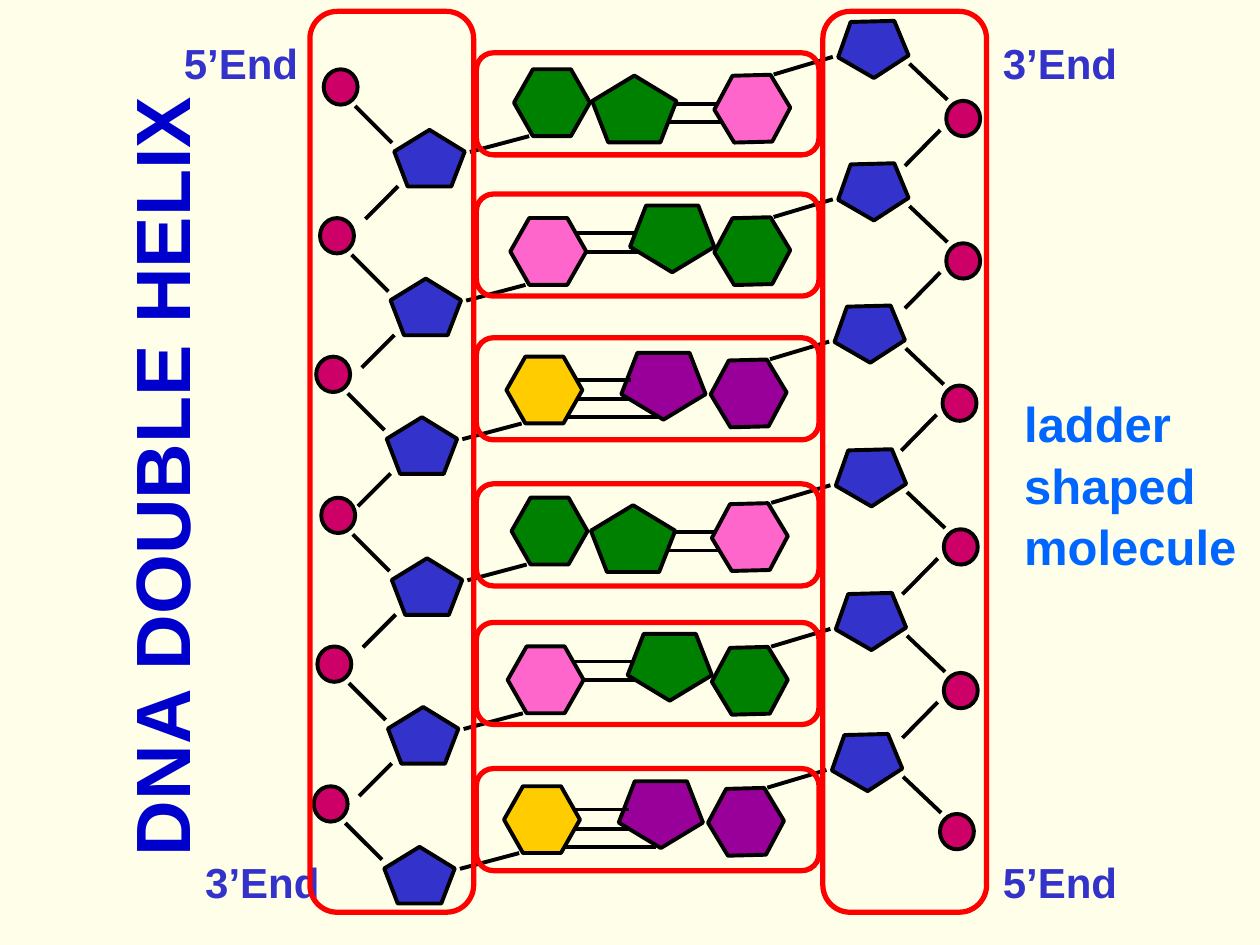
from dataclasses import dataclass
from typing import NamedTuple, Optional

from lxml.etree import SubElement
from pptx import Presentation
from pptx.dml.color import RGBColor
from pptx.enum.shapes import MSO_CONNECTOR, MSO_SHAPE
from pptx.enum.text import MSO_ANCHOR, MSO_AUTO_SIZE, PP_ALIGN
from pptx.oxml.ns import qn
from pptx.util import Pt

CREAM = RGBColor(0xFF, 0xFF, 0xE9)
BLACK = RGBColor(0x00, 0x00, 0x00)
RED = RGBColor(0xFF, 0x00, 0x00)
CRIMSON = RGBColor(0xCC, 0x00, 0x66)
INDIGO = RGBColor(0x33, 0x33, 0xCC)
GREEN = RGBColor(0x00, 0x80, 0x00)
PINK = RGBColor(0xFF, 0x66, 0xCC)
YELLOW = RGBColor(0xFF, 0xCC, 0x00)
PURPLE = RGBColor(0x99, 0x00, 0x99)
TITLE_BLUE = RGBColor(0x00, 0x00, 0xCC)
SKY_BLUE = RGBColor(0x00, 0x66, 0xFF)


class Point(NamedTuple):
    x: float
    y: float

    def shifted(self, offset: "Point") -> "Point":
        return Point(self.x + offset.x, self.y + offset.y)


class Link(NamedTuple):
    start: Point
    end: Point


class Bond(NamedTuple):
    left: float
    right: float
    y: float


@dataclass(frozen=True)
class Strand:
    sugar: Point
    base: Point
    sugar_link: Link
    base_link: Link
    next_link: Link
    rotation: float


@dataclass(frozen=True)
class Pairing:
    left_color: RGBColor
    ring_color: RGBColor
    right_color: RGBColor
    ring_rotation: float
    bonds: tuple[Bond, ...]
    front_bonds: tuple[Bond, ...] = ()


@dataclass(frozen=True)
class BasePair:
    left: Point
    right: Point
    ring: Point
    rung_top: float
    pairing: Pairing


PHOSPHATE_SIZE = Point(19.4, 20.2)
SUGAR_SIZE = Point(40.3, 32.4)
BASE_SIZE = Point(43.4, 38.2)
RING_SIZE = Point(48.2, 38.2)
RAIL_SIZE = Point(93.6, 514.8)
RUNG_SIZE = Point(195.8, 58.3)

LEFT_STRAND = Strand(
    sugar=Point(40.3, 34.6),
    base=Point(108.7, 0),
    sugar_link=Link(Point(18, 21), Point(39, 42)),
    base_link=Link(Point(83.5, 47.2), Point(117.4, 38.2)),
    next_link=Link(Point(42.5, 66.8), Point(23.8, 85.5)),
    rotation=0,
)
RIGHT_STRAND = Strand(
    sugar=Point(-61.9, -45.4),
    base=Point(-132.5, -14.6),
    sugar_link=Link(Point(0.7, -0.6), Point(-21, -21.2)),
    base_link=Link(Point(-64.8, -25.1), Point(-98.6, -15)),
    next_link=Link(Point(-3.4, 16.7), Point(-23.6, 37.2)),
    rotation=178.5,
)

GREEN_TO_PINK = Pairing(GREEN, GREEN, PINK, 0,
                        (Bond(92.5, 118.8, 19.8), Bond(87, 118.8, 30.2)))
PINK_TO_GREEN = Pairing(PINK, GREEN, GREEN, 180,
                        (Bond(36.7, 73.4, 8.6), Bond(41.8, 73.4, 19.4)))
YELLOW_TO_PURPLE = Pairing(YELLOW, PURPLE, PURPLE, 180,
                           (Bond(39.6, 71.3, 24.2), Bond(34.6, 87.1, 34.6)),
                           (Bond(39.6, 71.3, 13.3),))

BASE_PAIRS = (
    BasePair(Point(185, 39.6), Point(540.7, 57.6), Point(338.4, 43.2), 30.2, GREEN_TO_PINK),
    BasePair(Point(182.9, 124.6), Point(540.7, 139), Point(360, 117.4), 110.9, PINK_TO_GREEN),
    BasePair(Point(180.7, 203.8), Point(538.6, 220.3), Point(355, 201.6), 193, YELLOW_TO_PURPLE),
    BasePair(Point(183.6, 284.4), Point(539.3, 302.4), Point(337.7, 288.7), 276.5, GREEN_TO_PINK),
    BasePair(Point(181.4, 369.4), Point(539.3, 384.5), Point(358.6, 362.2), 355.7, PINK_TO_GREEN),
    BasePair(Point(179.3, 449.3), Point(537.1, 465.1), Point(353.5, 446.4), 439.2, YELLOW_TO_PURPLE),
)
END_LABELS = (
    ("3’End", Point(566, 18)),
    ("3’End", Point(110.2, 486)),
    ("5’End", Point(566, 486)),
    ("5’End", Point(98, 18)),
)


def add_outline(slide, kind: MSO_SHAPE, position: Point, size: Point,
                fill: Optional[RGBColor], rotation: float = 0,
                line: RGBColor = BLACK, width: float = 2.25,
                adjustment: Optional[float] = None) -> None:
    shape = slide.shapes.add_shape(kind, Pt(position.x), Pt(position.y), Pt(size.x), Pt(size.y))
    shape.shadow.inherit = False
    shape.rotation = rotation
    if fill is None:
        shape.fill.background()
    else:
        shape.fill.solid()
        shape.fill.fore_color.rgb = fill
    shape.line.color.rgb = line
    shape.line.width = Pt(width)
    if adjustment is not None:
        shape.adjustments[0] = adjustment


def add_link(slide, origin: Point, link: Link) -> None:
    start, end = origin.shifted(link.start), origin.shifted(link.end)
    connector = slide.shapes.add_connector(
        MSO_CONNECTOR.STRAIGHT, Pt(start.x), Pt(start.y), Pt(end.x), Pt(end.y))
    connector.line.color.rgb = BLACK
    connector.line.width = Pt(2.25)
    SubElement(connector._element.spPr, qn("a:effectLst"))


def add_bonds(slide, origin: Point, bonds: tuple[Bond, ...]) -> None:
    for bond in bonds:
        add_link(slide, origin, Link(Point(bond.left, bond.y), Point(bond.right, bond.y)))


def add_nucleotide(slide, strand: Strand, origin: Point, color: RGBColor, is_last: bool) -> None:
    add_outline(slide, MSO_SHAPE.OVAL, origin, PHOSPHATE_SIZE, CRIMSON, strand.rotation)
    add_outline(slide, MSO_SHAPE.REGULAR_PENTAGON, origin.shifted(strand.sugar),
                SUGAR_SIZE, INDIGO, strand.rotation)
    add_outline(slide, MSO_SHAPE.HEXAGON, origin.shifted(strand.base),
                BASE_SIZE, color, strand.rotation, adjustment=0.284)
    add_link(slide, origin, strand.sugar_link)
    add_link(slide, origin, strand.base_link)
    if not is_last:
        add_link(slide, origin, strand.next_link)


def add_base_pair(slide, pair: BasePair, is_last: bool) -> None:
    pairing = pair.pairing
    bond_origin = pair.left.shifted(LEFT_STRAND.base)
    add_bonds(slide, bond_origin, pairing.bonds)
    add_nucleotide(slide, LEFT_STRAND, pair.left, pairing.left_color, is_last)
    add_nucleotide(slide, RIGHT_STRAND, pair.right, pairing.right_color, is_last)
    add_outline(slide, MSO_SHAPE.REGULAR_PENTAGON, pair.ring, RING_SIZE,
                pairing.ring_color, pairing.ring_rotation)
    add_bonds(slide, bond_origin, pairing.front_bonds)


def add_frame(slide, position: Point, size: Point) -> None:
    add_outline(slide, MSO_SHAPE.ROUNDED_RECTANGLE, position, size, None,
                line=RED, width=3, adjustment=0.167)


def write_text(shape, text: str, size: float, color: RGBColor):
    paragraph = shape.text_frame.paragraphs[0]
    run = paragraph.add_run()
    run.text = text
    run.font.name = "Arial"
    run.font.size = Pt(size)
    run.font.bold = True
    run.font.color.rgb = color
    return paragraph


def add_title(slide) -> None:
    title = slide.shapes.title
    title.left, title.top, title.width, title.height = Pt(-149), Pt(243.4), Pt(480.2), Pt(57.6)
    title.rotation = 270
    title.text_frame.auto_size = MSO_AUTO_SIZE.NONE
    title.text_frame.vertical_anchor = MSO_ANCHOR.MIDDLE
    write_text(title, "DNA DOUBLE HELIX", 44, TITLE_BLUE).alignment = PP_ALIGN.CENTER


def main() -> None:
    presentation = Presentation()
    presentation.slide_width, presentation.slide_height = Pt(720), Pt(540)
    slide = presentation.slides.add_slide(presentation.slide_layouts[5])
    slide.background.fill.solid()
    slide.background.fill.fore_color.rgb = CREAM
    add_title(slide)
    for pair in BASE_PAIRS:
        add_base_pair(slide, pair, pair is BASE_PAIRS[-1])
    for text, position in END_LABELS:
        label = slide.shapes.add_textbox(Pt(position.x), Pt(position.y), Pt(80), Pt(36))
        label.text_frame.word_wrap = False
        write_text(label, text, 24, INDIGO)
    for rail_left in (177.1, 470.2):
        add_frame(slide, Point(rail_left, 6.5), RAIL_SIZE)
    for pair in BASE_PAIRS:
        add_frame(slide, Point(272.2, pair.rung_top), RUNG_SIZE)
    caption = slide.shapes.add_textbox(Pt(578.2), Pt(219.6), Pt(141.1), Pt(123.1))
    caption.text_frame.word_wrap = True
    write_text(caption, "ladder shaped molecule", 28, SKY_BLUE).line_spacing = 1.05
    presentation.save("out.pptx")


if __name__ == "__main__":
    main()
